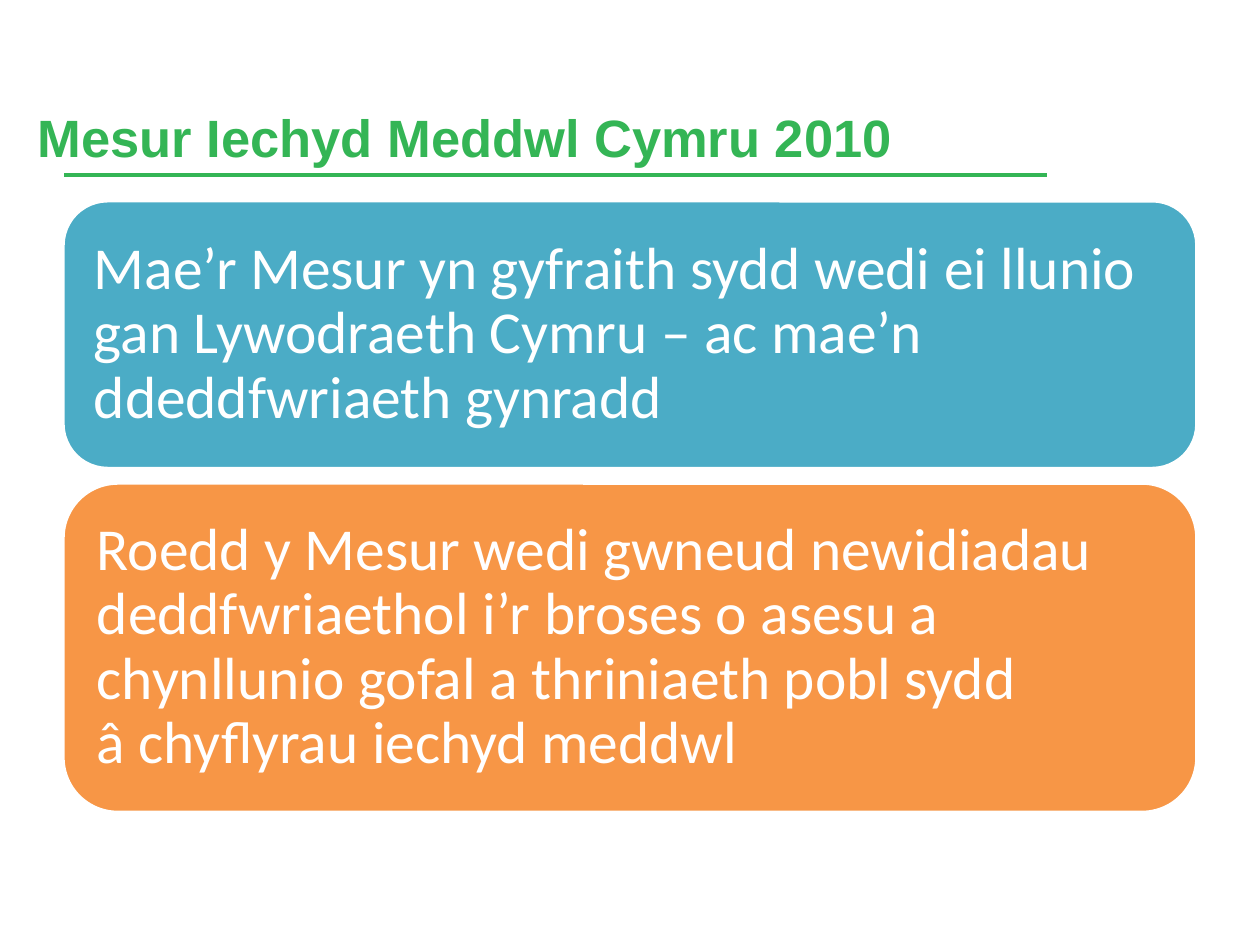
from lxml import etree
from pptx import Presentation
from pptx.dml.color import RGBColor
from pptx.enum import shapes, text
from pptx.oxml.ns import qn
from pptx.util import Pt


def color(value):
    return RGBColor.from_string(value)


GREEN, WHITE = "34B555", "FFFFFF"

deck = Presentation()
deck.slide_width, deck.slide_height = Pt(720), Pt(540)
page = deck.slides.add_slide(deck.slide_layouts[5])

# Rule under the title
rule = page.shapes.add_connector(
    shapes.MSO_CONNECTOR.STRAIGHT, Pt(36.75), Pt(100), Pt(598.5), Pt(100))
rule.line.color.rgb = color(GREEN)
rule.line.width = Pt(2)
etree.SubElement(rule._element.spPr, qn("a:effectLst"))

# Title
title = page.shapes.title
title.left, title.top, title.width, title.height = Pt(14.4), Pt(21), Pt(726), Pt(78.5)
frame = title.text_frame
frame.text = "Mesur Iechyd Meddwl Cymru 2010"
frame.word_wrap = True
frame.auto_size = text.MSO_AUTO_SIZE.NONE
frame.vertical_anchor = text.MSO_ANCHOR.BOTTOM
heading = frame.paragraphs[0]
heading.alignment = text.PP_ALIGN.LEFT
heading.font.name = "Arial"
heading.font.size = Pt(30)
heading.font.bold = True
heading.font.color.rgb = color(GREEN)

# Statement panels: top, height, fill, wording
panels = [
    (114.75, 153, "4BACC6",
     "Mae’r Mesur yn gyfraith sydd wedi ei llunio gan Lywodraeth Cymru – "
     "ac mae’n ddeddfwriaeth gynradd"),
    (276, 188.25, "F79646",
     "Roedd y Mesur wedi gwneud newidiadau deddfwriaethol i’r broses o asesu a "
     "chynllunio gofal a thriniaeth pobl sydd\vâ chyflyrau iechyd meddwl"),
]
for top, height, fill, wording in panels:
    box = page.shapes.add_shape(
        shapes.MSO_SHAPE.ROUNDED_RECTANGLE, Pt(36), Pt(top), Pt(648), Pt(height))
    box.shadow.inherit = False
    box.fill.solid()
    box.fill.fore_color.rgb = color(fill)
    box.line.color.rgb = color(WHITE)
    box.line.width = Pt(2)
    frame = box.text_frame
    frame.text = wording
    frame.word_wrap = True
    frame.vertical_anchor = text.MSO_ANCHOR.MIDDLE
    frame.margin_left = frame.margin_right = Pt(10.2)
    frame.margin_top = frame.margin_bottom = Pt(10.2)
    para = frame.paragraphs[0]
    para.alignment = text.PP_ALIGN.LEFT
    para.line_spacing = 0.9
    para.font.name = "Calibri"
    para.font.size = Pt(34)
    para.font.color.rgb = color(WHITE)

deck.save("out.pptx")
